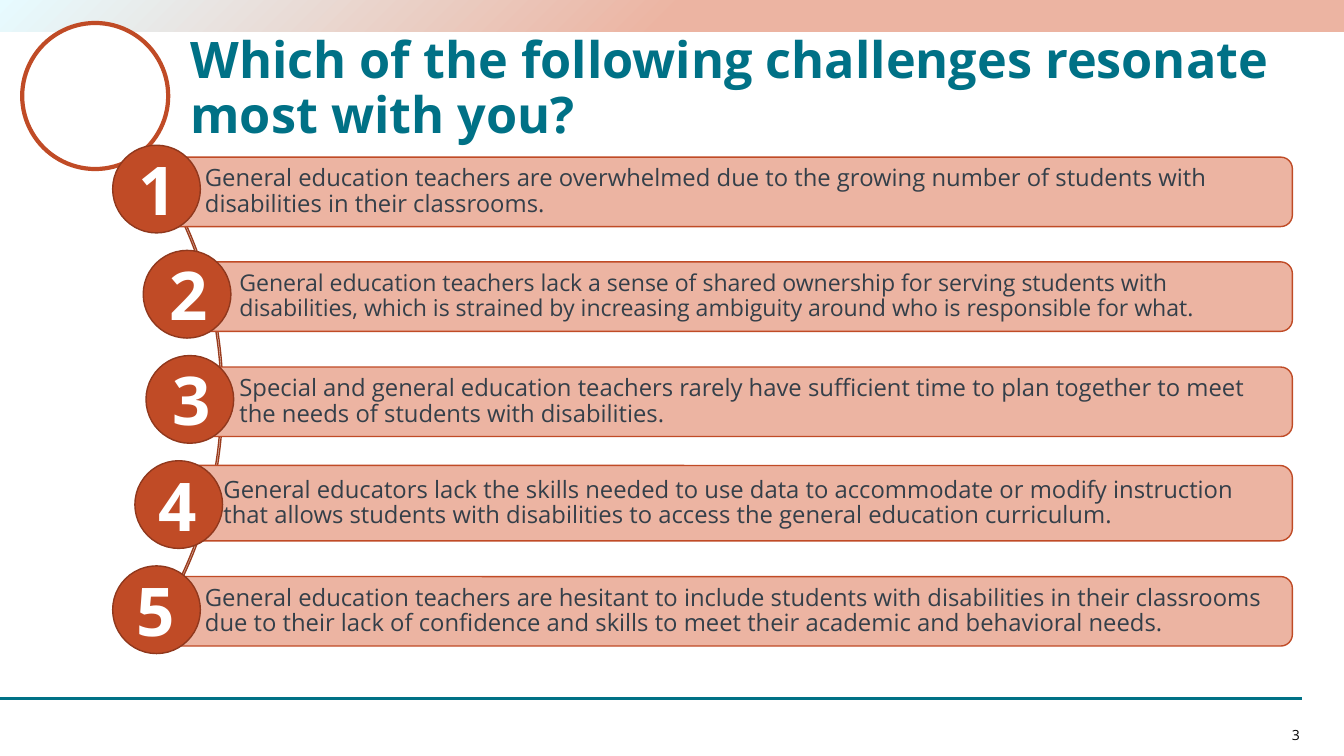
from pptx import Presentation
from pptx.dml.color import RGBColor
from pptx.enum.shapes import MSO_CONNECTOR, MSO_SHAPE as SHAPE
from pptx.enum.text import MSO_ANCHOR as ANCHOR, PP_ALIGN as ALIGN
from pptx.oxml import parse_xml
from pptx.oxml.ns import nsdecls
from pptx.util import Cm, Pt
from lxml import etree

TEAL = RGBColor(0x00, 0x71, 0x86)
RUST = RGBColor(0xC0, 0x4B, 0x26)
DARK_RUST = RGBColor(0x90, 0x38, 0x1D)
ARC_RUST = RGBColor(0x9A, 0x3C, 0x1E)
PEACH = RGBColor(0xEC, 0xB4, 0xA2)
ICE = RGBColor(0xE7, 0xFB, 0xFF)
SLATE = RGBColor(0x34, 0x3F, 0x49)
WHITE = RGBColor(0xFF, 0xFF, 0xFF)
BLACK = RGBColor(0x00, 0x00, 0x00)

presentation = Presentation()
presentation.slide_width, presentation.slide_height = Cm(33.87), Cm(19.05)
slide = presentation.slides.add_slide(presentation.slide_layouts[6])


def add_shape(kind, box, fill=None, line=None, width=1):
    shape = slide.shapes.add_shape(kind, *map(Cm, box))
    shape.shadow.inherit = False
    if fill is None:
        shape.fill.background()
    else:
        shape.fill.solid()
        shape.fill.fore_color.rgb = fill
    if line is None:
        shape.line.fill.background()
    else:
        shape.line.color.rgb = line
        shape.line.width = Pt(width)
    return shape


def write(shape, text, size, color, bold=False, margins=(0, 0, 0, 0), anchor=ANCHOR.TOP,
          wrap=True, **paragraph_format):
    frame = shape.text_frame
    frame.word_wrap = wrap
    frame.vertical_anchor = anchor
    for side, margin in zip(("left", "top", "right", "bottom"), margins):
        setattr(frame, f"margin_{side}", Cm(margin))
    paragraph = frame.paragraphs[0]
    for name, value in paragraph_format.items():
        setattr(paragraph, name, value)
    run = paragraph.add_run()
    run.text = text
    for name, value in {"name": "Open Sans", "size": Pt(size), "bold": bold}.items():
        setattr(run.font, name, value)
    run.font.color.rgb = color


# Footer line
footer_line = slide.shapes.add_connector(
    MSO_CONNECTOR.STRAIGHT, Cm(-0.05), Cm(17.6), Cm(32.82), Cm(17.6))
footer_line.line.color.rgb = TEAL
footer_line.line.width = Pt(1.5)
etree.SubElement(footer_line._element.spPr, footer_line._element.spPr.nsmap["a"].join("{}") + "effectLst")

# Gradient band across the top
band = add_shape(SHAPE.RECTANGLE, (0, 0, 33.99, 0.79))
stops = "".join(f'<a:gs pos="{position}"><a:srgbClr val="{color}"/></a:gs>'
                for position, color in ((0, PEACH), (50000, PEACH), (100000, ICE)))
gradient = parse_xml(
    f'<a:gradFill {nsdecls("a")} rotWithShape="1"><a:gsLst>{stops}</a:gsLst>'
    '<a:path path="circle"><a:fillToRect l="100000" t="100000"/></a:path></a:gradFill>')
band_properties = band._element.spPr
band_properties.replace(band_properties.find("{*}noFill"), gradient)

# Emblem ring and the arc behind the numbers
add_shape(SHAPE.OVAL, (0.56, 0.58, 3.68, 3.68), WHITE, RUST, 3)
arc = add_shape(SHAPE.BLOCK_ARC, (-11.02, 0.53, 16.64, 18.97), line=ARC_RUST)
for index, value in enumerate((189, 27, 0.003)):
    arc.adjustments[index] = value

# Title
title = slide.shapes.add_textbox(Cm(4.8), Cm(0.61), Cm(27.97), Cm(3.02))
write(title, "Which of the following challenges resonate most with you?", 36, TEAL, True,
      anchor=ANCHOR.BOTTOM, line_spacing=0.9)

# Challenges: bar left, top and height, circle left, number left, text size, text
BAR_RIGHT = 32.57
CIRCLE_TOP, CIRCLE_STEP, CIRCLE_SIZE = 3.66, 2.65, 2.21
challenges = [
    (3.68, 3.96, 1.75, 2.84, 3.48, 17,
     "General education teachers are overwhelmed due to the growing number of students "
     "with disabilities in their classrooms."),
    (4.55, 6.6, 1.75, 3.61, 4.27, 16.5,
     "General education teachers lack a sense of shared ownership for serving students "
     "with disabilities, which is strained by increasing ambiguity around who is "
     "responsible for what."),
    (4.55, 9.25, 1.75, 3.68, 4.34, 17,
     "Special and general education teachers rarely have sufficient time to plan together "
     "to meet the needs of students with disabilities."),
    (4.14, 11.73, 1.9, 3.4, 3.99, 17,
     "General educators lack the skills needed to use data to accommodate or modify "
     "instruction that allows students with disabilities to access the general education "
     "curriculum."),
    (3.68, 14.53, 1.75, 2.84, 3.43, 17,
     "General education teachers are hesitant to include students with disabilities in "
     "their classrooms due to their lack of confidence and skills to meet their academic "
     "and behavioral needs."),
]
for index, (left, top, height, circle_left, number_left, size, text) in enumerate(challenges):
    bar = add_shape(SHAPE.ROUNDED_RECTANGLE, (left, top, BAR_RIGHT - left, height), PEACH, RUST)
    write(bar, text, size, SLATE, margins=(1.4, 0.13, 0.13, 0.13), anchor=ANCHOR.MIDDLE,
          alignment=ALIGN.LEFT, line_spacing=0.9, space_after=Pt(6))

    circle_top = CIRCLE_TOP + index * CIRCLE_STEP
    add_shape(SHAPE.OVAL, (circle_left, circle_top, CIRCLE_SIZE, CIRCLE_SIZE), RUST, DARK_RUST)
    number = slide.shapes.add_textbox(Cm(number_left), Cm(circle_top + 0.08), Cm(0.91), Cm(2.06))
    write(number, str(index + 1), 48, WHITE, True, alignment=ALIGN.CENTER)

# Slide number
page = slide.shapes.add_textbox(Cm(32.33), Cm(18.29), Cm(0.43), Cm(0.43))
write(page, "3", 10, BLACK, anchor=ANCHOR.BOTTOM, wrap=False, alignment=ALIGN.RIGHT)

presentation.save("out.pptx")
